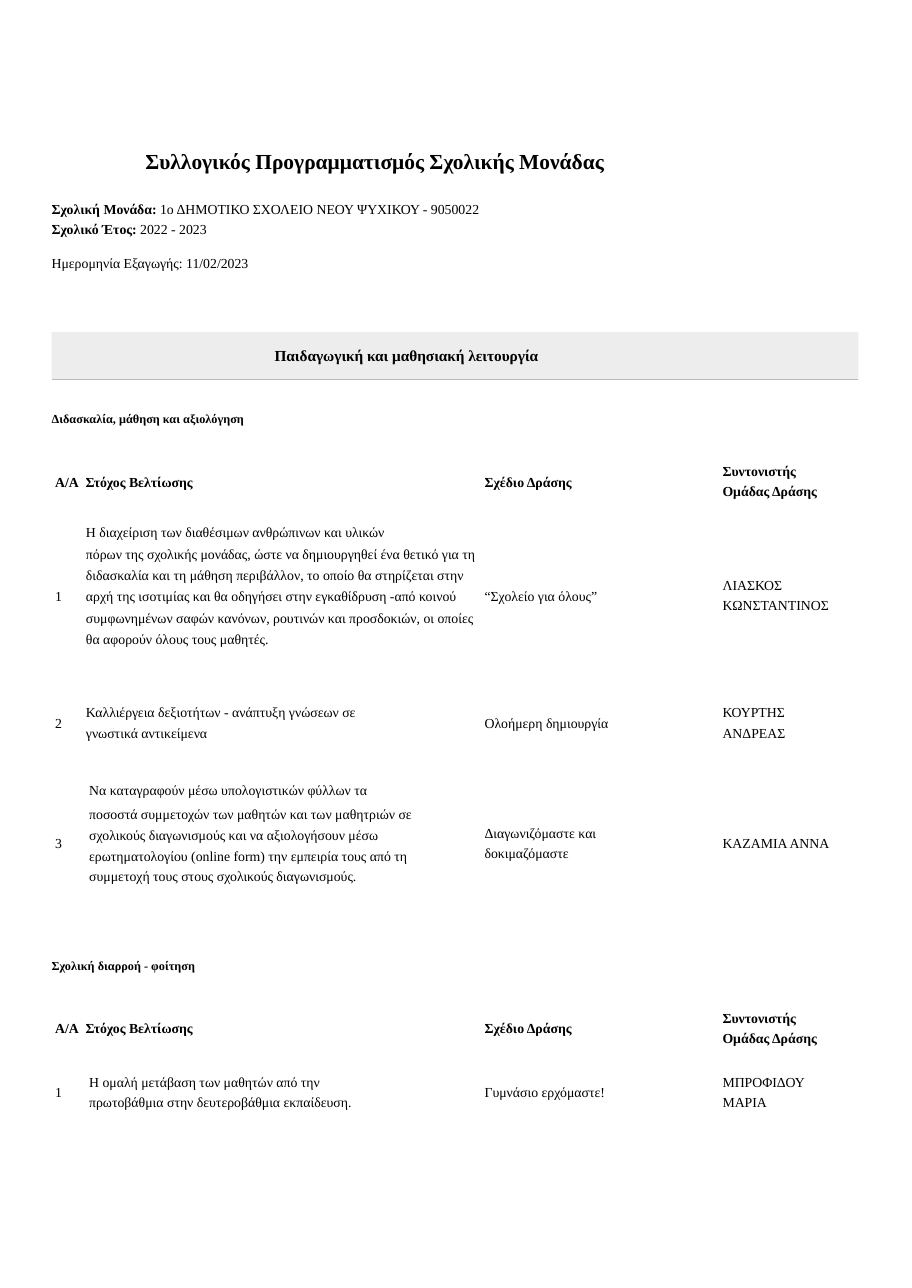
from dataclasses import dataclass

from lxml.etree import SubElement as sub
from pptx import Presentation
from pptx.dml.color import RGBColor as Rgb
from pptx.enum.shapes import MSO_CONNECTOR as Link, MSO_SHAPE as Form
from pptx.oxml.ns import qn
from pptx.util import Pt


@dataclass(frozen=True)
class Theme:
    face: str = "Times New Roman"
    ink: Rgb = Rgb(0x00, 0x00, 0x00)
    band: Rgb = Rgb(0xED, 0xED, 0xED)
    rule: Rgb = Rgb(0xBA, 0xBA, 0xBA)
    title: float = 14
    topic: float = 10
    body: float = 9
    head: float = 8


THEME = Theme()
LEFT, NUM, PLAN, LEAD = 33.8, 36, 316.8, 472.3
PLAN_W, LEAD_W = 103, 85
TAB = 19.9
RISE = 7.1  # lifts a two-line cell so that it is centred on its row

PAIR = {"line_spacing": 0.96, "space_before": Pt(3)}
LONG = {"line_spacing": Pt(13.8), "space_before": Pt(1)}
LOOSE = {"line_spacing": 1.25, "space_before": Pt(2.1)}

HEADS = ("A/A\tΣτόχος Βελτίωσης", "Σχέδιο Δράσης",
         ["Συντονιστής", "Ομάδας Δράσης"])

# Rows: drop below heading, goal (x, rise, width, format, lines), plan, lead
TEACH = [
    (115.2, (56.2, 41.8, 259, LONG, [
        "Η διαχείριση των διαθέσιμων ανθρώπινων και υλικών",
        "πόρων της σχολικής μονάδας, ώστε να δημιουργηθεί ένα θετικό για τη "
        "διδασκαλία και τη μάθηση περιβάλλον, το οποίο θα στηρίζεται στην "
        "αρχή της ισοτιμίας και θα οδηγήσει στην εγκαθίδρυση -από κοινού "
        "συμφωνημένων σαφών κανόνων, ρουτινών και προσδοκιών, οι οποίες "
        "θα αφορούν όλους τους μαθητές."]),
     ["“Σχολείο για όλους”"], ["ΛΙΑΣΚΟΣ", "ΚΩΝΣΤΑΝΤΙΝΟΣ"]),
    (198.7, (56.2, RISE, 227, PAIR, [
        "Καλλιέργεια δεξιοτήτων - ανάπτυξη γνώσεων σε",
        "γνωστικά αντικείμενα"]),
     ["Ολοήμερη δημιουργία"], ["ΚΟΥΡΤΗΣ", "ΑΝΔΡΕΑΣ"]),
    (277.2, (58.3, 34.6, 243, LOOSE, [
        "Να καταγραφούν μέσω υπολογιστικών φύλλων τα",
        "ποσοστά συμμετοχών των μαθητών και των μαθητριών σε "
        "σχολικούς διαγωνισμούς και να αξιολογήσουν μέσω "
        "ερωτηματολογίου (online form) την εμπειρία τους από τη "
        "συμμετοχή τους στους σχολικούς διαγωνισμούς."]),
     ["Διαγωνιζόμαστε και", "δοκιμαζόμαστε"], ["ΚΑΖΑΜΙΑ ΑΝΝΑ"]),
]
ATTEND = [
    (82.8, (58.3, RISE, 219, PAIR, [
        "Η ομαλή μετάβαση των μαθητών από την",
        "πρωτοβάθμια στην δευτεροβάθμια εκπαίδευση."]),
     ["Γυμνάσιο ερχόμαστε!"], ["ΜΠΡΟΦΙΔΟΥ", "ΜΑΡΙΑ"]),
]


def apply(item, form):
    for name, value in form.items():
        setattr(item, name, value)


def write(slide, box, lines, size=THEME.body, bold=False, lead=Pt(10.1),
          rest=PAIR):
    """Place text; a line is a string or a list of (text, bold) runs."""
    frame = slide.shapes.add_textbox(*map(Pt, box)).text_frame
    apply(frame, {"word_wrap": True, "margin_left": 0, "margin_right": 0,
                  "margin_top": 0, "margin_bottom": 0})
    for i, line in enumerate(lines):
        para = frame.add_paragraph() if i else frame.paragraphs[0]
        apply(para, rest if i else {"line_spacing": lead})
        for text, heavy in [(line, bold)] if isinstance(line, str) else line:
            run = para.add_run()
            run.text = text
            apply(run.font, {"name": THEME.face, "size": Pt(size),
                             "bold": heavy})
            run.font.color.rgb = THEME.ink
    return frame


def cell(slide, x, y, width, lines, bold=False):
    many = len(lines) > 1
    write(slide, (x, y - RISE * many, width, 24.5 if many else 10.8),
          lines, bold=bold)


def add_heads(slide, y):
    first, plan, lead = HEADS
    frame = write(slide, (NUM, y, 120, 10.8), [first], bold=True)
    tabs = sub(frame.paragraphs[0]._p.get_or_add_pPr(), qn("a:tabLst"))
    sub(tabs, qn("a:tab"), pos=str(Pt(TAB)), algn="l")
    cell(slide, PLAN, y, PLAN_W, [plan], bold=True)
    cell(slide, LEAD, y, LEAD_W, lead, bold=True)


def add_topic(slide, y, name, rows):
    """Draw a heading, its column heads and its numbered rows."""
    write(slide, (LEFT, y, 174, 10), [name], THEME.head, True, Pt(9.1))
    add_heads(slide, y + 41)
    for num, (drop, goal, plan, lead) in enumerate(rows, 1):
        x, rise, width, rest, lines = goal
        top = y + drop
        cell(slide, NUM, top, 9.4, [str(num)])
        write(slide, (x, top - rise, width, 2 * rise + 10.8), lines, rest=rest)
        cell(slide, PLAN, top, PLAN_W, plan)
        cell(slide, LEAD, top, LEAD_W, lead)


def add_band(slide, text):
    band = slide.shapes.add_shape(
        Form.RECTANGLE, *map(Pt, (LEFT, 217, 527.4, 31)))
    band.shadow.inherit = False
    band.fill.solid()
    band.fill.fore_color.rgb = THEME.band
    band.line.fill.background()
    rule = slide.shapes.add_connector(
        Link.STRAIGHT, *map(Pt, (LEFT, 247.8, LEFT + 527.4, 247.8)))
    rule.line.color.rgb = THEME.rule
    rule.line.width = Pt(0.85)
    sub(rule._element.spPr, qn("a:effectLst"))
    write(slide, (179.5, 227, 300, 12), [text], THEME.topic, True, 0.96)


def main():
    deck = Presentation()
    apply(deck, {"slide_width": Pt(596.16), "slide_height": Pt(841.68)})
    slide = deck.slides.add_slide(deck.slide_layouts[6])
    add_band(slide, "Παιδαγωγική και μαθησιακή λειτουργία")
    write(slide, (95, 98.6, 406, 16),
          ["Συλλογικός Προγραμματισμός Σχολικής Μονάδας"],
          THEME.title, True, Pt(15.2))
    write(slide, (LEFT, 131.8, 339, 25), [
        [("Σχολική Μονάδα: ", True),
         ("1ο ΔΗΜΟΤΙΚΟ ΣΧΟΛΕΙΟ ΝΕΟΥ ΨΥΧΙΚΟΥ - 9050022", False)],
        [("Σχολικό Έτος: ", True), ("2022 - 2023", False)]])
    write(slide, (LEFT, 167, 166, 10.8), ["Ημερομηνία Εξαγωγής: 11/02/2023"])
    add_topic(slide, 269.3, "Διδασκαλία, μάθηση και αξιολόγηση", TEACH)
    add_topic(slide, 626.4, "Σχολική διαρροή - φοίτηση", ATTEND)
    deck.save("out.pptx")


if __name__ == "__main__":
    main()
